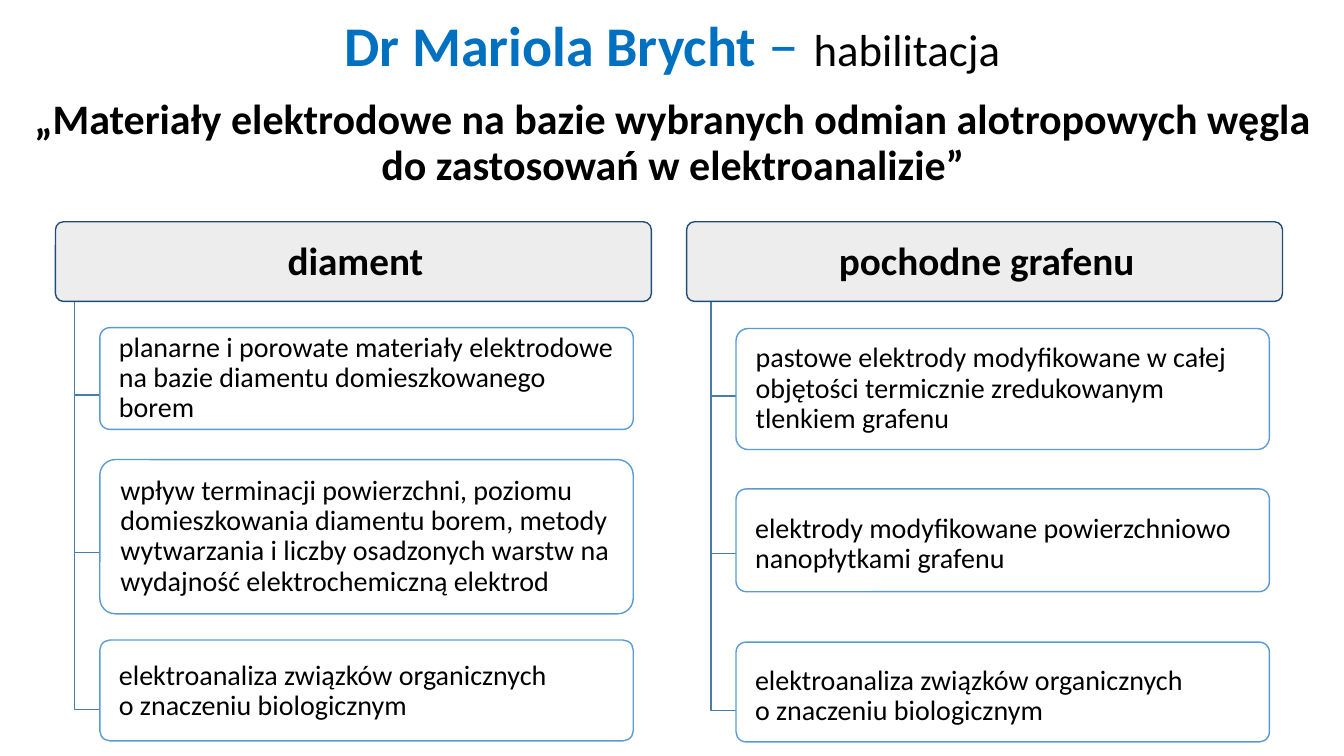
from dataclasses import dataclass

from pptx import Presentation
from pptx.dml.color import RGBColor
from pptx.enum.shapes import MSO_SHAPE
from pptx.enum.text import MSO_ANCHOR, PP_ALIGN
from pptx.util import Emu, Pt

PX = 9144  # 100 px to the inch


@dataclass(frozen=True)
class Theme:
    font: str = "Calibri"
    text: str = "000000"
    accent: str = "0070C0"
    header_fill: str = "EDEDED"
    header_line: str = "1F4E79"
    card_fill: str = "FFFFFF"
    card_line: str = "5B9BD5"
    branch_line: str = "497CAB"
    name_size: int = 40
    dash_size: int = 44
    topic_size: int = 32
    subtitle_size: int = 30
    header_size: int = 28
    card_size: int = 20


THEME = Theme()


def px(length):
    return Emu(round(length * PX))


def color(value):
    return RGBColor.from_string(value)


def set_line(shape, line_color):
    shape.shadow.inherit = False
    shape.line.color.rgb = color(line_color)
    shape.line.width = Pt(1)


def set_frame(shape, insets, anchor=MSO_ANCHOR.MIDDLE):
    frame = shape.text_frame
    frame.word_wrap = True
    frame.vertical_anchor = anchor
    frame.margin_left, frame.margin_top, frame.margin_right, frame.margin_bottom = map(px, insets)
    return frame


def write(frame, text, size, bold=False, alignment=PP_ALIGN.CENTER):
    """Fill the first paragraph; a newline in the text becomes a line break."""
    paragraph = frame.paragraphs[0]
    paragraph.alignment = alignment
    paragraph.line_spacing = 0.9
    paragraph.font.name = THEME.font
    paragraph.font.size = Pt(size)
    paragraph.font.bold = bold
    paragraph.font.color.rgb = color(THEME.text)
    for index, line in enumerate(text.split("\n")):
        if index:
            paragraph.add_line_break()
        paragraph.add_run().text = line
    return paragraph


def add_box(slide, box, fill, line):
    shape = slide.shapes.add_shape(MSO_SHAPE.ROUNDED_RECTANGLE, *map(px, box))
    shape.adjustments[0] = 0.1
    shape.fill.solid()
    shape.fill.fore_color.rgb = color(fill)
    set_line(shape, line)
    return shape


def add_title(slide, box):
    frame = set_frame(slide.shapes.add_textbox(*map(px, box)), (10, 5, 10, 5))
    paragraph = frame.paragraphs[0]
    paragraph.alignment = PP_ALIGN.CENTER
    paragraph.line_spacing = 0.9
    paragraph.font.name = THEME.font
    for text, size, bold, text_color in (
        ("Dr Mariola Brycht ", THEME.name_size, True, THEME.accent),
        ("– ", THEME.dash_size, False, THEME.accent),
        ("habilitacja", THEME.topic_size, False, THEME.text),
    ):
        run = paragraph.add_run()
        run.text = text
        run.font.size = Pt(size)
        run.font.bold = bold
        run.font.color.rgb = color(text_color)


def add_subtitle(slide, box, text):
    frame = set_frame(slide.shapes.add_textbox(*map(px, box)), (10, 5, 10, 5), MSO_ANCHOR.TOP)
    paragraph = write(frame, text, THEME.subtitle_size, bold=True)
    paragraph.space_before = Pt(10)


def add_branch(slide, left, top, width, height):
    """Draw one elbow from the header down and across to a card."""
    builder = slide.shapes.build_freeform(px(left), px(top))
    builder.add_line_segments(
        [(px(left), px(top + height)), (px(left + width), px(top + height))], close=False
    )
    branch = builder.convert_to_shape()
    branch.fill.background()
    set_line(branch, THEME.branch_line)


def add_column(slide, box, heading, indent, branch_top, cards):
    """Place a heading over cards given as (top offset, height, text drop, text)."""
    left, top, width, header_height = box
    branch_width, first_branch, branch_step = 25, 93, 156
    card_left, card_width = left + indent, 529

    # Elbows
    for index in range(len(cards)):
        add_branch(slide, card_left - branch_width, top + branch_top,
                   branch_width, first_branch + index * branch_step)

    # Header
    header = add_box(slide, (left, top, width, header_height),
                     THEME.header_fill, THEME.header_line)
    write(set_frame(header, (11, 7, 7, 5)), heading, THEME.header_size, bold=True)

    # Cards
    for offset, height, drop, text in cards:
        card = add_box(slide, (card_left, top + offset, card_width, height),
                       THEME.card_fill, THEME.card_line)
        frame = set_frame(card, (16, 7 + 2 * drop, 4, 7))
        write(frame, text, THEME.card_size, alignment=PP_ALIGN.LEFT)


def main():
    presentation = Presentation()
    presentation.slide_width, presentation.slide_height = px(1333), px(750)
    slide = presentation.slides.add_slide(presentation.slide_layouts[6])

    add_title(slide, (92, 0, 1150, 93))
    add_subtitle(slide, (15, 93, 1305, 101),
                 "„Materiały elektrodowe na bazie wybranych odmian alotropowych węgla "
                 "do zastosowań w elektroanalizie”")

    analysis = "elektroanaliza związków organicznych \no znaczeniu biologicznym"
    add_column(slide, (55, 220, 591, 79), "diament", 44, 79, [
        (105, 101, 0, "planarne i porowate materiały elektrodowe "
                      "na bazie diamentu domieszkowanego borem"),
        (236, 153, 0, "wpływ terminacji powierzchni, poziomu domieszkowania diamentu borem, "
                      "metody wytwarzania i liczby osadzonych warstw na "
                      "wydajność elektrochemiczną elektrod"),
        (415, 100, 1, analysis),
    ])
    add_column(slide, (681, 220, 591, 79), "pochodne grafenu", 49, 80, [
        (106, 120, 0, "pastowe elektrody modyfikowane w całej objętości "
                      "termicznie zredukowanym tlenkiem grafenu"),
        (265, 102, 4, "elektrody modyfikowane powierzchniowo nanopłytkami grafenu"),
        (417, 99, 4, analysis),
    ])

    presentation.save("out.pptx")


if __name__ == "__main__":
    main()
